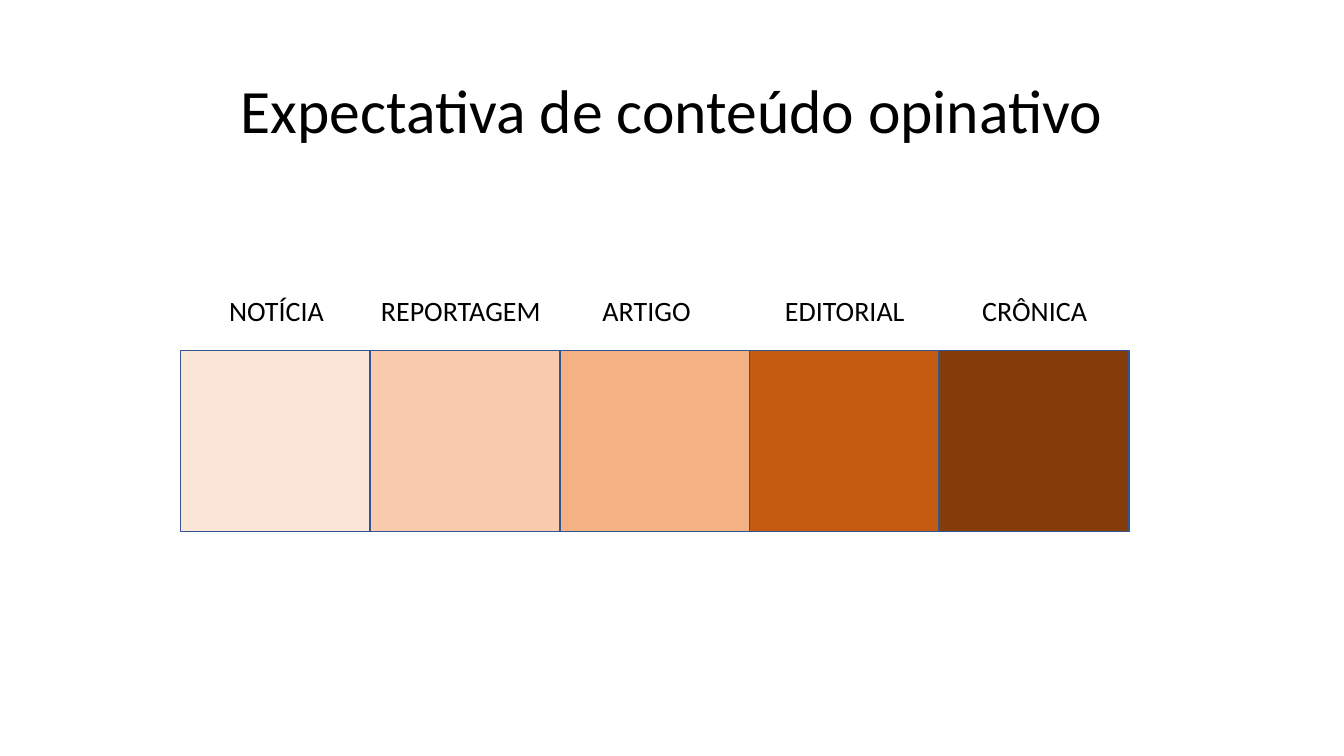
import pptx
import pptx.util
import pptx.dml.color
import pptx.enum.shapes
import pptx.enum.text

Cm, Pt = pptx.util.Cm, pptx.util.Pt
ALIGN = pptx.enum.text.PP_ALIGN
ANCHOR = pptx.enum.text.MSO_ANCHOR

# Content: genre, fill, label left and width (cm), label alignment
TITLE = "Expectativa de conteúdo opinativo"
GENRES = [
    ("NOTÍCIA", "FBE5D6", 5.05, 3.84, ALIGN.CENTER),
    ("REPORTAGEM", "F8CBAD", 9.35, 4.78, ALIGN.LEFT),
    ("ARTIGO", "F4B183", 14.58, 3.43, ALIGN.CENTER),
    ("EDITORIAL", "C55A11", 18.9, 4.78, ALIGN.CENTER),
    ("CRÔNICA", "843C0B", 24.26, 3.63, ALIGN.CENTER),
]
OUTLINE = "325491"
TITLE_FONT = {"name": "Calibri", "size": Pt(44)}
LABEL_FONT = {"name": "Calibri", "size": Pt(20)}

# Scale geometry (cm)
SCALE_LEFT, SCALE_TOP = 4.55, 8.84
CELL_W, CELL_H = 4.78, 4.55
LABEL_TOP, LABEL_H = 7.26, 1.12


def rgb(value):
    return pptx.dml.color.RGBColor.from_string(value)


def write(tf, text, font, align):
    tf.word_wrap = True
    p = tf.paragraphs[0]
    p.alignment = align
    r = p.add_run()
    r.text = text
    for name, value in font.items():
        setattr(r.font, name, value)
    r.font.color.rgb = rgb("000000")
    return p


prs = pptx.Presentation()
prs.slide_width, prs.slide_height = Cm(33.87), Cm(19.05)
s = prs.slides.add_slide(prs.slide_layouts[5])

# Title
sp = s.shapes.title
sp.left, sp.top, sp.width, sp.height = Cm(2.33), Cm(1.01), Cm(29.21), Cm(3.68)
sp.text_frame.vertical_anchor = ANCHOR.MIDDLE
p = write(sp.text_frame, TITLE, TITLE_FONT, ALIGN.CENTER)
p.line_spacing = 0.9

# Colour scale
for i, (_, fill, *_) in enumerate(GENRES):
    sp = s.shapes.add_shape(pptx.enum.shapes.MSO_SHAPE.RECTANGLE,
                            Cm(SCALE_LEFT + i * CELL_W), Cm(SCALE_TOP),
                            Cm(CELL_W), Cm(CELL_H))
    sp.shadow.inherit = False
    sp.fill.solid()
    sp.fill.fore_color.rgb = rgb(fill)
    sp.line.color.rgb = rgb(OUTLINE)
    sp.line.width = Pt(1)

# Genre labels
for genre, _, left, width, align in GENRES:
    sp = s.shapes.add_textbox(Cm(left), Cm(LABEL_TOP), Cm(width), Cm(LABEL_H))
    sp.text_frame.auto_size = pptx.enum.text.MSO_AUTO_SIZE.SHAPE_TO_FIT_TEXT
    write(sp.text_frame, genre, LABEL_FONT, align)

prs.save("out.pptx")
